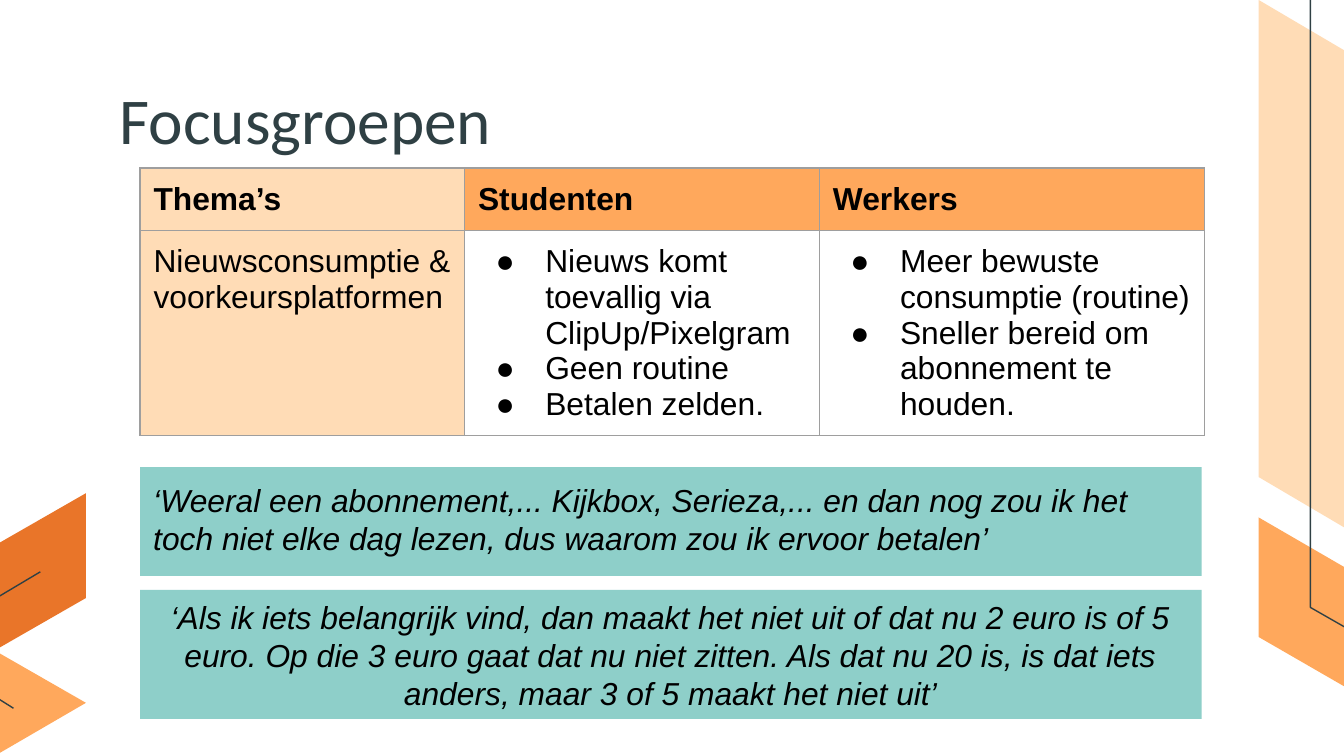
from pptx import Presentation
from pptx.dml.color import RGBColor
from pptx.enum.shapes import MSO_SHAPE
from pptx.enum.text import MSO_ANCHOR, PP_ALIGN
from pptx.oxml import parse_xml
from pptx.oxml.ns import nsdecls
from pptx.util import Inches, Pt

RECTANGLE = MSO_SHAPE.RECTANGLE
TOP, MIDDLE = MSO_ANCHOR.TOP, MSO_ANCHOR.MIDDLE
LEFT, CENTER = PP_ALIGN.LEFT, PP_ALIGN.CENTER

# Square grid: 100 columns across the 16:9 slide, 56.25 rows down
CELL = 0.1
COLUMNS, ROWS = 100, 56.25
MARGIN = 10.42

PEACH, ORANGE, RUST = "FFDCB6", "FFA85C", "E97529"
TEAL, SLATE, BLACK, GRAY = "8ECFC9", "2F4044", "000000", "9E9E9E"
BODY = {"name": "Arial", "size": Pt(17)}

# Decorations as (fill, corner points); a fill of None is an open line
DECORATIONS = [
    (PEACH, [(93.65, 0), (93.65, 35.5), (101.3, 40), (101.3, 4.5)]),
    (ORANGE, [(93.65, 38.5), (93.65, 47.4), (109, 56.25), (109, 47.4)]),
    (None, [(97.5, 0), (97.5, 45.2), (113.6, 54.4)]),
    (RUST, [(-0.4, 40.6), (6.4, 36.7), (6.4, 44.5), (-0.4, 48.4)]),
    (ORANGE, [(-0.4, 56.25), (-7.2, 52.3), (-0.4, 48.4), (6.4, 52.3)]),
    (None, [(1, 52.7), (-3.3, 50), (-3.3, 46.3), (3, 42.55)]),
]

TABLE_WIDTHS = [24.15, 26.4, 28.65]
TABLE_HEIGHTS = [4.65, 15.25]
# Each cell: fill, bold, bulleted, paragraphs
TABLE_CELLS = [
    [(PEACH, True, False, ["Thema’s"]),
     (ORANGE, True, False, ["Studenten"]),
     (ORANGE, True, False, ["Werkers"])],
    [(PEACH, False, False, ["Nieuwsconsumptie & voorkeursplatformen"]),
     (None, False, True, ["Nieuws komt toevallig via ClipUp/Pixelgram",
                          "Geen routine", "Betalen zelden."]),
     (None, False, True, ["Meer bewuste consumptie (routine)",
                          "Sneller bereid om abonnement te houden."])],
]

# Each quote: top row, height in rows, alignment, anchor, vertical inset, text
QUOTES = [
    (34.75, 8.1, LEFT, TOP, 1,
     "‘Weeral een abonnement,... Kijkbox, Serieza,... en dan nog zou ik het "
     "toch niet elke dag lezen, dus waarom zou ik ervoor betalen’"),
    (43.9, 9.6, CENTER, MIDDLE, 0.5,
     "‘Als ik iets belangrijk vind, dan maakt het niet uit of dat nu 2 euro is "
     "of 5 euro. Op die 3 euro gaat dat nu niet zitten. Als dat nu 20 is, is "
     "dat iets anders, maar 3 of 5 maakt het niet uit’"),
]


def cells(count):
    return Inches(count * CELL)


def color(value):
    return RGBColor.from_string(value)


def set_values(target, values):
    for name, value in values.items():
        setattr(target, name, value)


def write(para, text, font, hue=BLACK):
    span = para.add_run()
    span.text = text
    set_values(span.font, font)
    span.font.color.rgb = color(hue)


def add_decoration(page, fill, points):
    start, *rest = [(cells(x), cells(y)) for x, y in points]
    builder = page.shapes.build_freeform(*start)
    builder.add_line_segments(rest, close=fill is not None)
    outline = builder.convert_to_shape()
    outline.shadow.inherit = False
    if fill:
        outline.fill.solid()
        outline.fill.fore_color.rgb = color(fill)
        outline.line.fill.background()
    else:
        outline.fill.background()
        outline.line.color.rgb = color(SLATE)
        outline.line.width = Pt(0.75)


def add_title(page, text):
    title = page.shapes.title
    set_values(title, {"left": cells(7.9), "top": cells(5.9),
                       "width": cells(84.3), "height": cells(5.7)})
    frame = title.text_frame
    set_values(frame, {"margin_left": cells(1), "margin_right": cells(1),
                       "margin_top": 0, "margin_bottom": cells(1),
                       "vertical_anchor": TOP, "word_wrap": True})
    para = frame.paragraphs[0]
    para.alignment = LEFT
    write(para, text, {"name": "Calibri", "size": Pt(35)}, SLATE)


def add_bullet(para):
    props = para._p.get_or_add_pPr()
    props.set("marL", str(cells(5)))
    props.set("indent", str(cells(-3.7)))
    for tag in (f'buClr {nsdecls("a")}><a:srgbClr val="{BLACK}"/></a:buClr>',
                f'buFont {nsdecls("a")} typeface="Arial"/>',
                f'buChar {nsdecls("a")} char="●"/>'):
        props.append(parse_xml(f"<a:{tag}"))


def add_borders(cell):
    props = cell._tc.get_or_add_tcPr()
    for position, side in enumerate(("lnL", "lnR", "lnT", "lnB")):
        props.insert(position, parse_xml(
            f'<a:{side} {nsdecls("a")} w="{Pt(0.75)}"><a:solidFill>'
            f'<a:srgbClr val="{GRAY}"/></a:solidFill></a:{side}>'))


def fill_cell(cell, fill, bold, bulleted, lines):
    set_values(cell, {"margin_left": cells(1), "margin_right": cells(1),
                      "margin_top": cells(1), "margin_bottom": cells(1)})
    if fill:
        cell.fill.solid()
        cell.fill.fore_color.rgb = color(fill)
    else:
        cell.fill.background()
    add_borders(cell)
    frame = cell.text_frame
    for index, line in enumerate(lines):
        para = frame.add_paragraph() if index else frame.paragraphs[0]
        if bulleted:
            add_bullet(para)
        write(para, line, {**BODY, "bold": bold})


def add_theme_table(page):
    table = page.shapes.add_table(
        len(TABLE_HEIGHTS), len(TABLE_WIDTHS), cells(MARGIN), cells(12.5),
        cells(sum(TABLE_WIDTHS)), cells(sum(TABLE_HEIGHTS))).table
    set_values(table, {"first_row": False, "horz_banding": False})
    for column, width in zip(table.columns, TABLE_WIDTHS):
        column.width = cells(width)
    for row, height, contents in zip(table.rows, TABLE_HEIGHTS, TABLE_CELLS):
        row.height = cells(height)
        for cell, content in zip(row.cells, contents):
            fill_cell(cell, *content)


def add_quote(page, top, height, alignment, anchor, inset, text):
    box = page.shapes.add_shape(
        RECTANGLE, cells(MARGIN), cells(top), cells(79), cells(height))
    box.shadow.inherit = False
    box.fill.solid()
    box.fill.fore_color.rgb = color(TEAL)
    box.line.fill.background()
    frame = box.text_frame
    set_values(frame, {"margin_left": cells(1), "margin_right": cells(1),
                       "margin_top": cells(inset), "margin_bottom": cells(inset),
                       "vertical_anchor": anchor, "word_wrap": True})
    para = frame.paragraphs[0]
    para.alignment = alignment
    write(para, text, {**BODY, "italic": True})


def main():
    deck = Presentation()
    set_values(deck, {"slide_width": cells(COLUMNS), "slide_height": cells(ROWS)})
    page = deck.slides.add_slide(deck.slide_layouts[5])  # title only

    for fill, points in DECORATIONS:
        add_decoration(page, fill, points)
    add_title(page, "Focusgroepen")
    add_theme_table(page)
    for quote in QUOTES:
        add_quote(page, *quote)

    deck.save("out.pptx")


if __name__ == "__main__":
    main()
